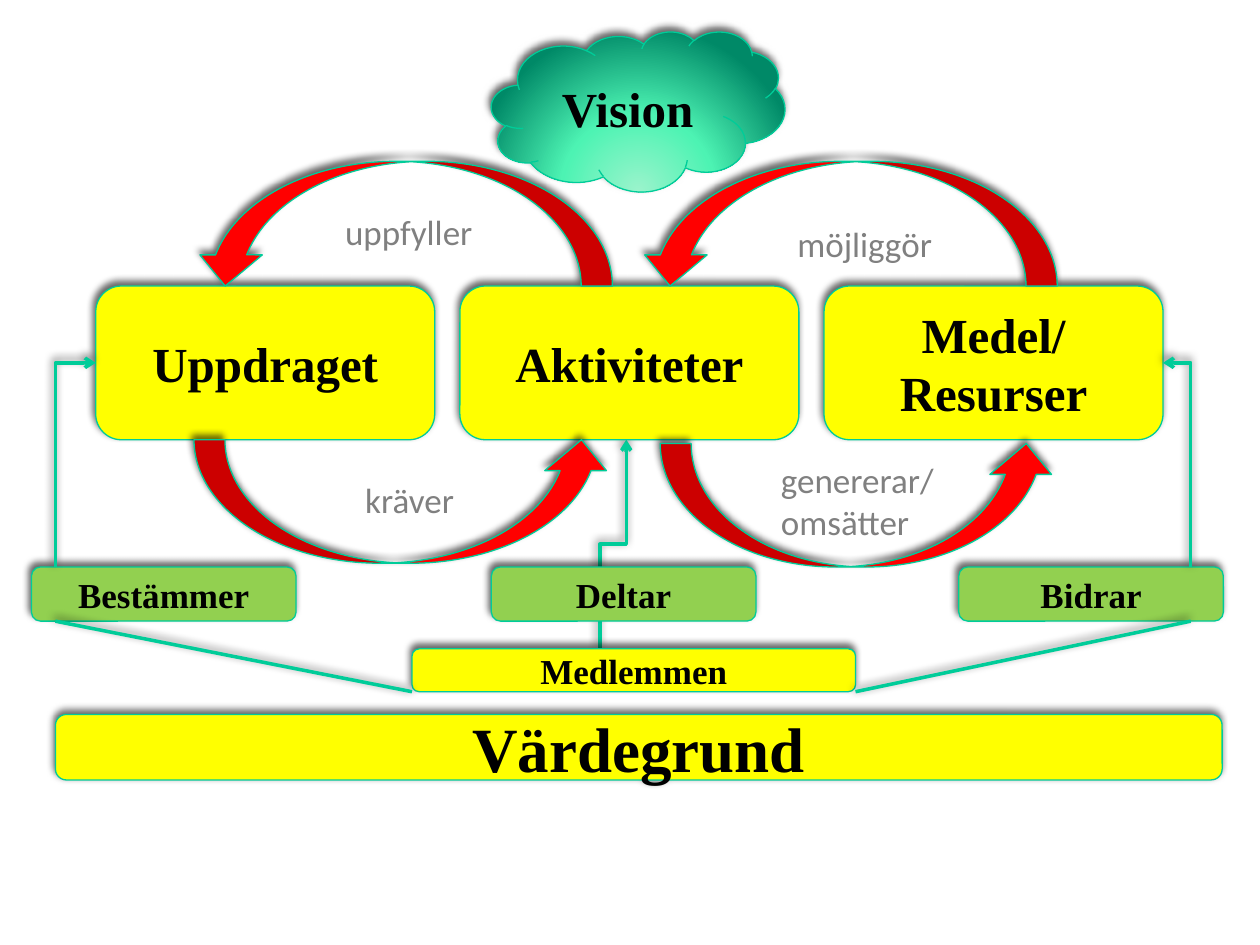
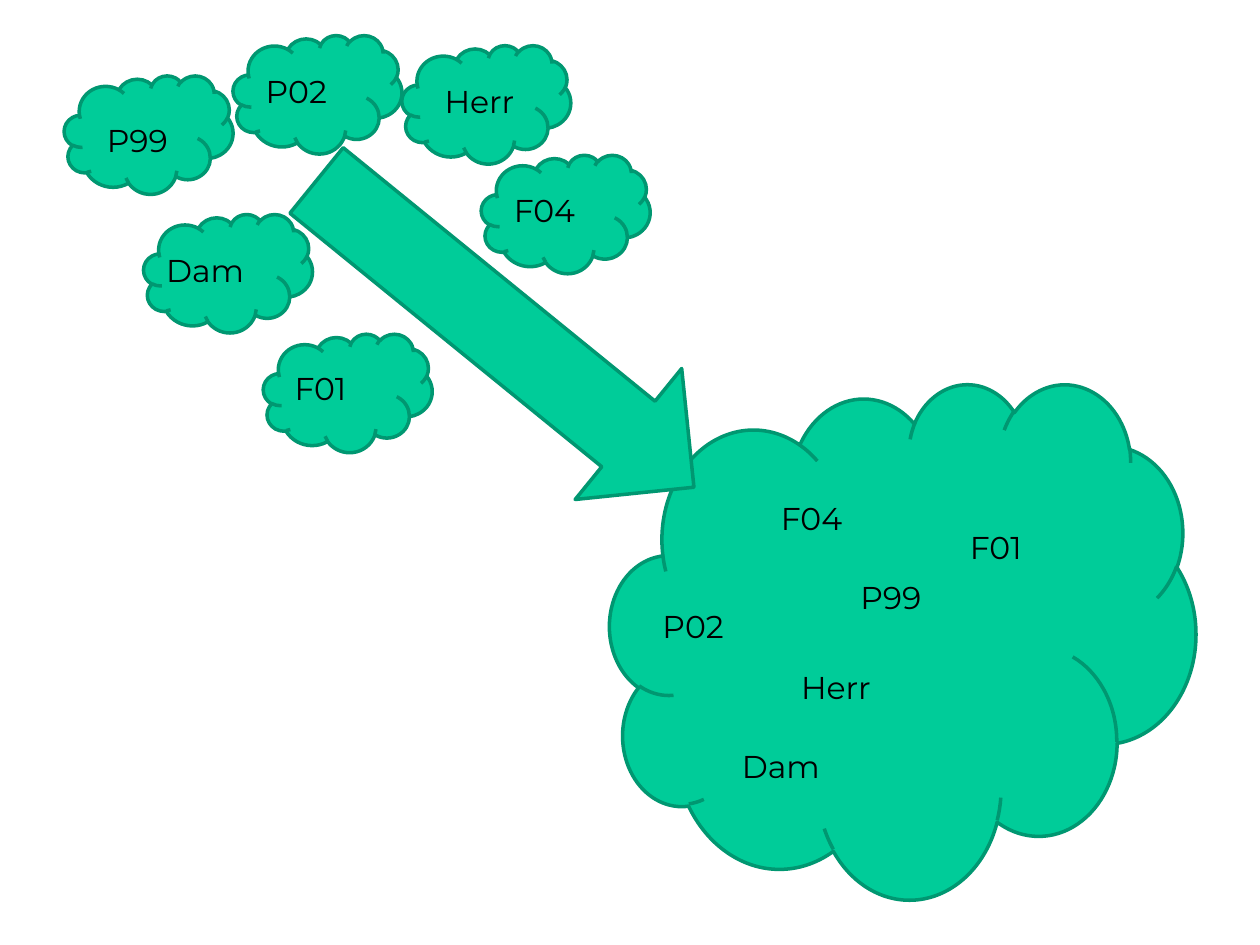
from lxml.etree import SubElement
from pptx import Presentation
from pptx.dml.color import RGBColor
from pptx.enum.shapes import MSO_CONNECTOR, MSO_SHAPE
from pptx.enum.text import MSO_ANCHOR, PP_ALIGN
from pptx.oxml import parse_xml
from pptx.oxml.ns import nsdecls, qn
from pptx.util import Emu, Inches, Pt

TEAL, EDGE, RED = "00CC99", "009771", "FF0000"
GOLD, LEAF, GREY, INK = "FFFF00", "92D050", "808080", "000000"
SERIF, SANS, ROUND = "Times New Roman", "Calibri", "Montserrat"
SOFT, DEEP = (50, 5, 2, 245), (60, 4, 3, 245)

STEPS = ["Aktiviteter", "Medel/\vResurser", "Uppdraget"]
COLS = [1, 2, 0]
STEP_X, STEP_Y, PITCH, STEP_W, STEP_H = 0.76, 2.27, 2.89, 2.69, 1.22
ROLES = [("Bestämmer", 0.25), ("Deltar", 3.9), ("Bidrar", 7.61)]
ROLE_Y, ROLE_W, ROLE_H = 4.5, 2.1, 0.43
BASES = [("Medlemmen", (3.27, 5.15, 3.52, 0.34), 20),
         ("Värdegrund", (0.44, 5.67, 9.26, 0.52), 36)]
LOOPS = [((1.54, 3.49, 3.32, 0.98), 0), ((5.24, 3.52, 3.15, 0.98), 0),
         ((1.54, 1.28, 3.32, 0.99), 180), ((5.07, 1.28, 3.32, 0.99), 180)]
VERBS = [("kräver", (2.8, 3.75, 1.11, 0.44)),
         ("genererar/omsätter", (6.1, 3.59, 1.5, 0.77)),
         ("uppfyller", (2.64, 1.62, 1.35, 0.44)),
         ("möjliggör", (6.23, 1.72, 1.36, 0.44))]
GLOW = [(0, "9BF3CC"), (46, "4DF3B3"), (100, "008967")]
SIDE_Y = STEP_Y + STEP_H / 2
LEFT, RIGHT = 0.44, 9.45
MID = ((4.76, 5.15), (4.97, 3.49), 90, "HV", 3)
BENDS = [((LEFT, ROLE_Y), (STEP_X, SIDE_Y), 90, "HV", 2),
         ((RIGHT, ROLE_Y), (9.23, SIDE_Y), 270, "V", 2)]
RAYS = [((3.27, 5.49), (LEFT, 4.93)), ((6.79, 5.49), (RIGHT, 4.93))]

TEAMS = [("P99", (0.51, 0.6), (0.24, 0.31), (6.73, 4.54)),
         ("Dam", (1.14, 1.7), (0.08, 0.24), (5.79, 5.88)),
         ("Herr", (3.19, 0.36), (0.24, 0.24), (6.26, 5.25)),
         ("F01", (2.09, 2.65), (0.15, 0.23), (7.6, 4.14)),
         ("P02", (1.85, 0.28), (0.16, 0.24), (5.16, 4.77)),
         ("F04", (3.82, 1.23), (0.16, 0.24), (6.1, 3.91))]
PUFF, WORD = (1.34, 0.94), (1.1, 0.4)
POOL, ARROW, TILT = (4.84, 3.04, 4.65, 4.09), (2.08, 1.98, 3.86, 1.34), 39.1


def rgb(code):
    return RGBColor.from_string(code)


def write(shape, text, face, size, color, bold=False, align=PP_ALIGN.LEFT):
    frame = shape.text_frame
    frame.word_wrap = True
    frame.text = text
    for para in frame.paragraphs:
        para.alignment = align
        for run in para.runs:
            font = run.font
            font.name, font.size, font.bold = face, Pt(size), bold
            font.color.rgb = rgb(color)


def shade(item, look):
    props = item.element.spPr
    box = props.find(qn("a:effectLst"))
    if box is None:
        box = SubElement(props, qn("a:effectLst"))
    alpha, blur, dist, turn = look
    drop = SubElement(box, qn("a:outerShdw"), blurRad=str(Pt(blur)),
                      dist=str(Pt(dist)), dir=str(turn * 60000), rotWithShape="0")
    tone = SubElement(drop, qn("a:srgbClr"), val=INK)
    SubElement(tone, qn("a:alpha"), val=str(alpha * 1000))


def form(slide, kind, area, fill, edge=TEAL, width=0.75, turn=0, look=None):
    shape = slide.shapes.add_shape(kind, *map(Inches, area))
    shape.rotation = turn
    shape.fill.solid()
    shape.fill.fore_color.rgb = rgb(fill)
    shape.line.color.rgb = rgb(edge)
    shape.line.width = Pt(width)
    shape.shadow.inherit = False
    if look:
        shade(shape, look)
    return shape


def box(slide, text, area, fill, size, kind=MSO_SHAPE.ROUNDED_RECTANGLE):
    shape = form(slide, kind, area, fill, look=DEEP)
    write(shape, text, SERIF, size, INK, True, PP_ALIGN.CENTER)
    shape.text_frame.vertical_anchor = MSO_ANCHOR.MIDDLE
    return shape


def label(slide, text, area, face, size, color):
    write(slide.shapes.add_textbox(*map(Inches, area)), text, face, size, color)


def link(slide, kind, start, end):
    line = slide.shapes.add_connector(kind, *map(Inches, start + end))
    line.line.color.rgb = rgb(TEAL)
    line.line.width = Pt(2)
    shade(line, SOFT)
    return line


def bend(slide, start, end, turn, flips, legs):
    line = link(slide, MSO_CONNECTOR.ELBOW, start, end)
    midx, midy = line.left + line.width // 2, line.top + line.height // 2
    line.width, line.height = line.height, line.width
    line.left, line.top = Emu(midx - line.width // 2), Emu(midy - line.height // 2)
    props = line.element.spPr
    frame = props.find(qn("a:xfrm"))
    frame.set("rot", str(turn * 60000))
    for axis in "HV":
        frame.set("flip" + axis, str(int(axis in flips)))
    props.find(qn("a:prstGeom")).set("prst", f"bentConnector{legs}")
    SubElement(props.find(qn("a:ln")), qn("a:tailEnd"), type="arrow")


def glow(shape):
    stops = "".join(f'<a:gs pos="{at * 1000}"><a:srgbClr val="{code}"/></a:gs>'
                    for at, code in GLOW)
    grad = parse_xml(
        f'<a:gradFill {nsdecls("a")} rotWithShape="1"><a:gsLst>{stops}</a:gsLst>'
        '<a:path path="circle"><a:fillToRect l="50000" t="155000" r="50000" '
        'b="-55000"/></a:path></a:gradFill>')
    props = shape.element.spPr
    props.replace(props.find(qn("a:solidFill")), grad)


def model(slide):
    bend(slide, *MID)
    for text, col in zip(STEPS, COLS):
        area = STEP_X + col * PITCH, STEP_Y, STEP_W, STEP_H
        box(slide, text, area, GOLD, 28)
    for text, left in ROLES:
        box(slide, text, (left, ROLE_Y, ROLE_W, ROLE_H), LEAF, 20)
    glow(box(slide, "Vision", (3.9, 0.25, 2.33, 1.27), TEAL, 28, MSO_SHAPE.CLOUD))
    for area, turn in LOOPS:
        form(slide, MSO_SHAPE.CURVED_UP_ARROW, area, RED, turn=turn, look=DEEP)
    for text, area, size in BASES:
        box(slide, text, area, GOLD, size)
    for path in BENDS:
        bend(slide, *path)
    for start, end in RAYS:
        link(slide, MSO_CONNECTOR.STRAIGHT, start, end)
    for text, area in VERBS:
        label(slide, text, area, SANS, 20, GREY)


def merge(slide):
    form(slide, MSO_SHAPE.CLOUD, POOL, TEAL, EDGE, 2)
    form(slide, MSO_SHAPE.RIGHT_ARROW, ARROW, TEAL, EDGE, 2, TILT)
    for name, (left, top), (right, down), goal in TEAMS:
        form(slide, MSO_SHAPE.CLOUD, (left, top) + PUFF, TEAL, EDGE, 2)
        for spot in [(left + right, top + down), goal]:
            label(slide, name, spot + WORD, ROUND, 18, INK)


def main():
    deck = Presentation()
    deck.slide_width, deck.slide_height = Inches(10), Inches(7.5)
    for draw in (model, merge):
        draw(deck.slides.add_slide(deck.slide_layouts[6]))
    deck.save("out.pptx")


if __name__ == "__main__":
    main()
